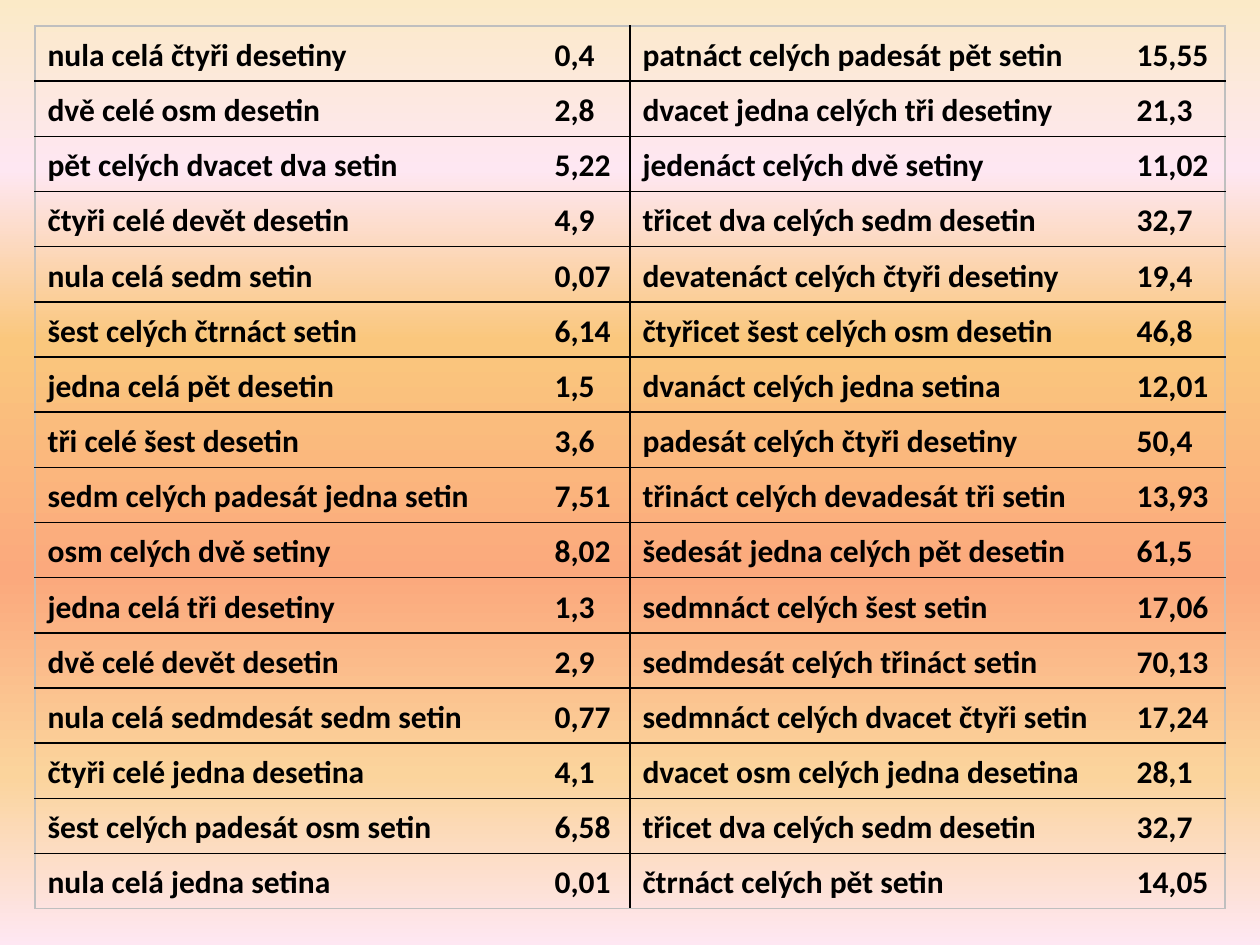
"""Build a slide with a two-column table of decimal numbers in words and digits."""
from lxml.etree import SubElement
from pptx import Presentation
from pptx.dml.color import RGBColor
from pptx.enum.text import MSO_ANCHOR
from pptx.oxml.ns import qn
from pptx.util import Pt

EMU_PER_PX = 914400 / 126
BLACK, GREY = "000000", "BFBFBF"
BACKGROUND_STOPS = [
    (0, "FBEAC7"), (18, "FEE7F2"), (36, "FAC77D"),
    (61, "FBA97D"), (82, "FBD49C"), (100, "FEE7F2"),
]
NUMBER_TABS = [507, 494]
NUMBERS = [
    [("nula celá čtyři desetiny", "0,4"), ("patnáct celých padesát pět setin", "15,55")],
    [("dvě celé osm desetin", "2,8"), ("dvacet jedna celých tři desetiny", "21,3")],
    [("pět celých dvacet dva setin", "5,22"), ("jedenáct celých dvě setiny", "11,02")],
    [("čtyři celé devět desetin", "4,9"), ("třicet dva celých sedm desetin", "32,7")],
    [("nula celá sedm setin", "0,07"), ("devatenáct celých čtyři desetiny", "19,4")],
    [("šest celých čtrnáct setin", "6,14"), ("čtyřicet šest celých osm desetin", "46,8")],
    [("jedna celá pět desetin", "1,5"), ("dvanáct celých jedna setina", "12,01")],
    [("tři celé šest desetin", "3,6"), ("padesát celých čtyři desetiny", "50,4")],
    [("sedm celých padesát jedna setin", "7,51"), ("třináct celých devadesát tři setin", "13,93")],
    [("osm celých dvě setiny", "8,02"), ("šedesát jedna celých pět desetin", "61,5")],
    [("jedna celá tři desetiny", "1,3"), ("sedmnáct celých šest setin", "17,06")],
    [("dvě celé devět desetin", "2,9"), ("sedmdesát celých třináct setin", "70,13")],
    [("nula celá sedmdesát sedm setin", "0,77"), ("sedmnáct celých dvacet čtyři setin", "17,24")],
    [("čtyři celé jedna desetina", "4,1"), ("dvacet osm celých jedna desetina", "28,1")],
    [("šest celých padesát osm setin", "6,58"), ("třicet dva celých sedm desetin", "32,7")],
    [("nula celá jedna setina", "0,01"), ("čtrnáct celých pět setin", "14,05")],
]


def px(length):
    return round(length * EMU_PER_PX)


def color(value):
    return RGBColor.from_string(value)


def add_color(parent, value):
    return SubElement(parent, qn("a:srgbClr"), val=str(color(value)))


def set_background(slide, stops):
    fill = slide.background.fill
    fill.gradient()
    fill.gradient_angle = 270
    stop_list = slide.element.find(".//" + qn("a:gsLst"))
    for old_stop in list(stop_list):
        stop_list.remove(old_stop)
    for percent, value in stops:
        add_color(SubElement(stop_list, qn("a:gs"), pos=str(percent * 1000)), value)


def add_border(cell, side, is_outer):
    properties = cell._tc.get_or_add_tcPr()
    width = Pt(0.75) if is_outer else Pt(1)
    line = SubElement(properties, qn(f"a:ln{side}"), w=str(width))
    add_color(SubElement(line, qn("a:solidFill")), GREY if is_outer else BLACK)


def add_tab_stop(paragraph, position):
    tabs = SubElement(paragraph._p.get_or_add_pPr(), qn("a:tabLst"))
    SubElement(tabs, qn("a:tab"), pos=str(px(position)), algn="l")


def add_run(paragraph, text):
    run = paragraph.add_run()
    run.text = text
    run.font.name = "Calibri"
    run.font.size = Pt(18)
    run.font.bold = True
    run.font.color.rgb = color(BLACK)


def fill_cell(cell, words, digits, tab_position):
    cell.vertical_anchor = MSO_ANCHOR.BOTTOM
    cell.fill.background()
    paragraph = cell.text_frame.paragraphs[0]
    add_tab_stop(paragraph, tab_position)
    add_run(paragraph, f"{words}\t{digits}")


def add_number_table(slide, left, top, width, height):
    row_count, column_count = len(NUMBERS), len(NUMBER_TABS)
    frame = slide.shapes.add_table(
        row_count, column_count, px(left), px(top), px(width), px(height))
    table = frame.table
    table.first_row = table.horz_banding = False
    for row, entries in enumerate(NUMBERS):
        for column, (words, digits) in enumerate(entries):
            cell = table.cell(row, column)
            add_border(cell, "L", column == 0)
            add_border(cell, "R", column == column_count - 1)
            add_border(cell, "T", row == 0)
            add_border(cell, "B", row == row_count - 1)
            fill_cell(cell, words, digits, NUMBER_TABS[column])


def main():
    presentation = Presentation()
    presentation.slide_width = px(1260)
    presentation.slide_height = px(945)
    slide = presentation.slides.add_slide(presentation.slide_layouts[6])
    set_background(slide, BACKGROUND_STOPS)
    add_number_table(slide, left=35, top=26, width=1190, height=883)
    presentation.save("out.pptx")


if __name__ == "__main__":
    main()
